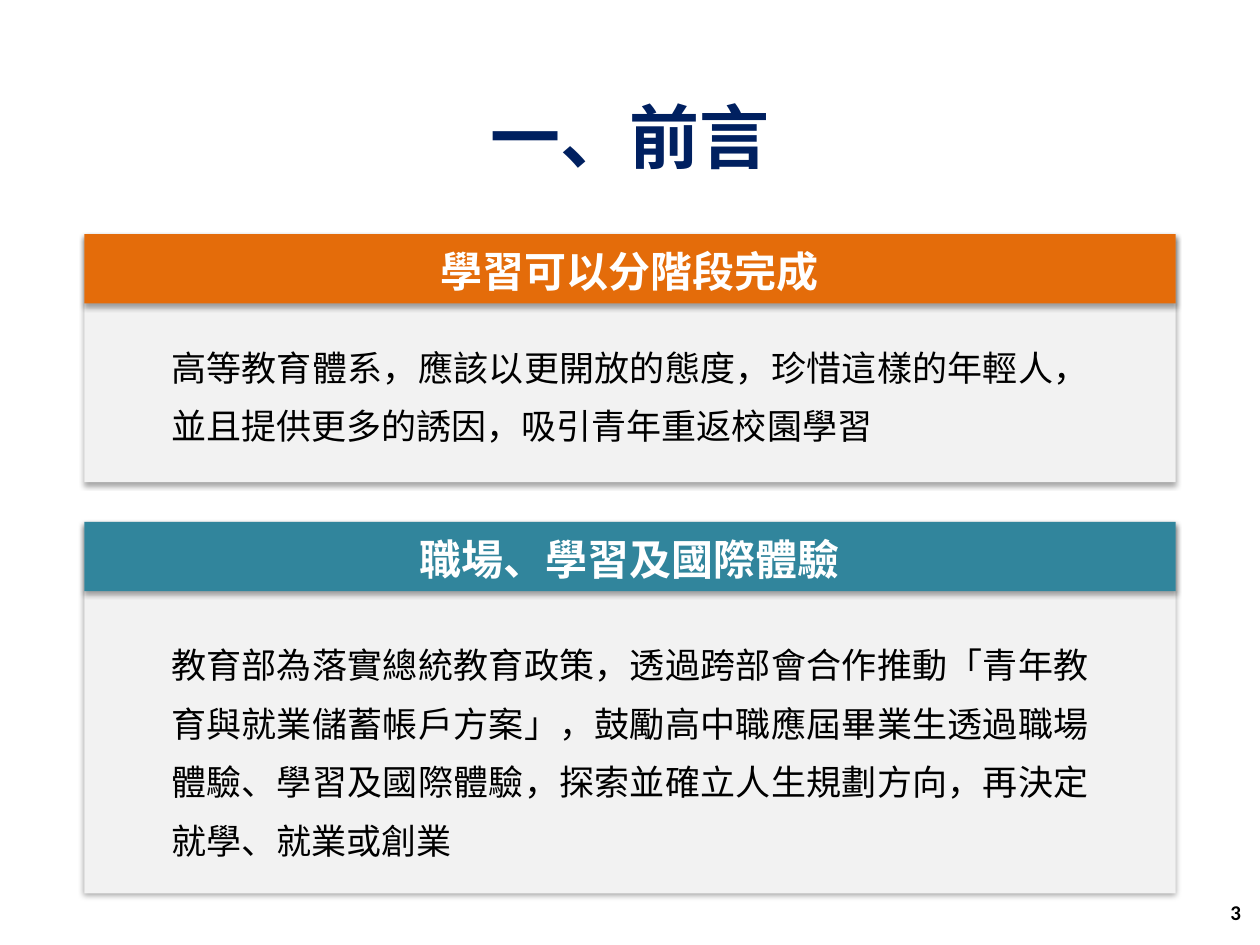
"""Build the preface slide: a title above two headed text panels."""
from lxml import etree
from pptx import Presentation
from pptx import util as u
from pptx.dml.color import RGBColor
from pptx.enum import shapes, text
from pptx.oxml.ns import qn

COLORS = {"title": "002060", "orange": "E46C0A", "teal": "31859C",
          "panel": "F2F2F2", "white": "FFFFFF", "black": "000000"}
CJK = "Noto Sans CJK SC"
LEFT, WIDTH, BAR = 1.7, 22.0, 1.4
PANELS = [
    ("學習可以分階段完成", "orange", 4.72, 5.0, 6.53, 2.59,
     "高等教育體系，應該以更開放的態度，珍惜這樣的年輕人，"
     "並且提供更多的誘因，吸引青年重返校園學習"),
    ("職場、學習及國際體驗", "teal", 10.52, 7.49, 12.7, 4.6,
     "教育部為落實總統教育政策，透過跨部會合作推動「青年教育與就業儲蓄帳戶方案」，"
     "鼓勵高中職應屆畢業生透過職場體驗、學習及國際體驗，"
     "探索並確立人生規劃方向，再決定就學、就業或創業"),
]


def write(sp, words, size, color, align, bold=False, spacing=None,
          anchor=text.MSO_ANCHOR.MIDDLE, font=CJK):
    """Fill a shape with one formatted paragraph."""
    tf = sp.text_frame
    tf.word_wrap = True
    tf.vertical_anchor = anchor
    p = tf.paragraphs[0]
    p.text = words
    p.alignment = align
    p.line_spacing = spacing
    p.font.size = u.Pt(size)
    p.font.bold = bold
    p.font.name = font
    p.font.color.rgb = RGBColor.from_string(COLORS[color])
    ea = etree.SubElement(p._p.pPr.find(qn("a:defRPr")), qn("a:ea"))
    ea.set("typeface", font)


prs = Presentation()
prs.slide_width, prs.slide_height = u.Cm(25.4), u.Cm(19.05)
s = prs.slides.add_slide(prs.slide_layouts[5])

title = s.shapes.title
title.left, title.top, title.width, title.height = u.Cm(0), u.Cm(1.93), u.Cm(25.4), u.Cm(1.6)
write(title, "一、前言", 40, "title", text.PP_ALIGN.CENTER, bold=True)

for heading, accent, top, height, body_top, body_height, body in PANELS:
    group = s.shapes.add_group_shape().shapes
    for fill, h in (("panel", height), (accent, BAR)):
        sp = group.add_shape(shapes.MSO_SHAPE.RECTANGLE,
                             u.Cm(LEFT), u.Cm(top), u.Cm(WIDTH), u.Cm(h))
        sp.fill.solid()
        sp.fill.fore_color.rgb = RGBColor.from_string(COLORS[fill])
        sp.line.fill.background()
    sp = group.add_textbox(u.Cm(LEFT), u.Cm(top), u.Cm(WIDTH), u.Cm(BAR))
    write(sp, heading, 24, "white", text.PP_ALIGN.CENTER, bold=True,
          spacing=1.1, anchor=text.MSO_ANCHOR.TOP)
    sp = group.add_textbox(u.Cm(3.2), u.Cm(body_top), u.Cm(19), u.Cm(body_height))
    write(sp, body, 20, "black", text.PP_ALIGN.JUSTIFY, spacing=1.4)

number = s.shapes.add_textbox(u.Cm(19.35), u.Cm(17.88), u.Cm(5.92), u.Cm(1.02))
write(number, "3", 12, "black", text.PP_ALIGN.RIGHT, bold=True, font="Calibri")

prs.save("out.pptx")
